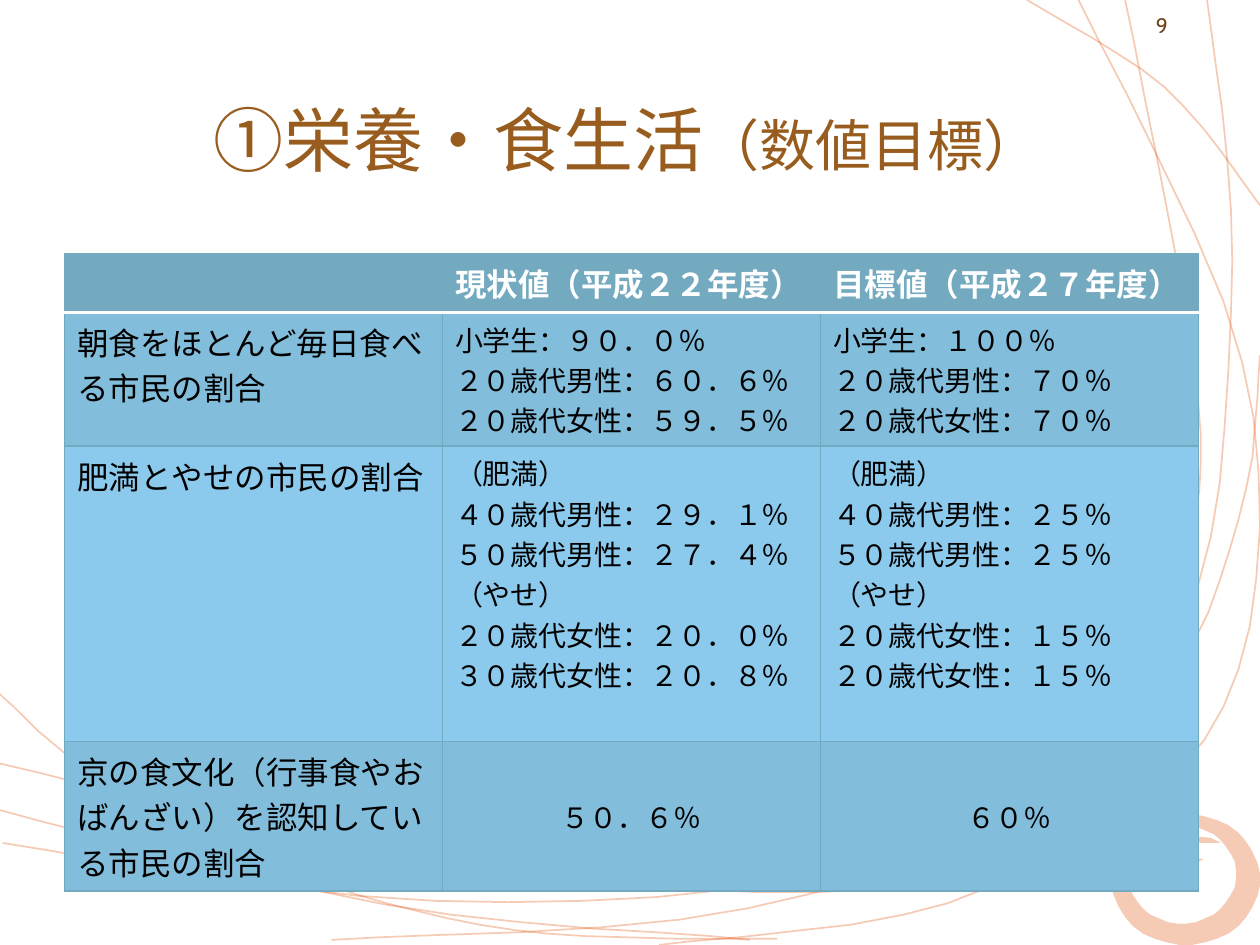
"""Build a slide with numeric targets for nutrition and diet."""
from math import cos, radians, sin

from lxml import etree
from pptx import Presentation
from pptx.dml.color import RGBColor
from pptx.enum.text import MSO_ANCHOR, PP_ALIGN
from pptx.oxml.ns import qn
from pptx.util import Cm, Pt

CENTER, LEFT = PP_ALIGN.CENTER, PP_ALIGN.LEFT
MIDDLE, TOP = MSO_ANCHOR.MIDDLE, MSO_ANCHOR.TOP
ORANGE, TEAL, BAND, SKY = "E3560E", "73AAC0", "82BDDB", "8CCAED"
WHITE, BLACK, BROWN, DARK_BROWN = "FFFFFF", "000000", "975C1E", "704416"
POINT_UNIT = Cm(0.0254)
CURVE_STEPS = 6

STRANDS = [
    [(-3, 548), (54, 600), (145, 656), (283, 710), (434, 741), (617, 745)],
    [(523, 750), (752, 717), (879, 624), (944, 435), (947, 287), (893, 0)],
    [(0, 606), (311, 677), (649, 708), (865, 665), (983, 531), (986, 288), (856, 0)],
    [(2, 669), (345, 715), (682, 687), (908, 560), (983, 412), (1000, 282)],
    [(263, 746), (593, 721), (844, 625), (951, 464), (978, 207), (958, 0)],
    [(815, 0), (924, 69), (1000, 163)],
    [(0, 643), (306, 718), (595, 746)],
]
BRUSH_FLECKS = [
    [(922, 661), (961, 665), (969, 669), (950, 669)],
    [(930, 676), (955, 682), (951, 684)],
]
ROWS = [
    ("", "現状値（平成２２年度）", "目標値（平成２７年度）"),
    ("朝食をほとんど毎日食べる市民の割合",
     "小学生：９０．０％\n２０歳代男性：６０．６％\n２０歳代女性：５９．５％",
     "小学生：１００％\n２０歳代男性：７０％\n２０歳代女性：７０％"),
    ("肥満とやせの市民の割合",
     "（肥満）\n４０歳代男性：２９．１％\n５０歳代男性：２７．４％\n"
     "（やせ）\n２０歳代女性：２０．０％\n３０歳代女性：２０．８％",
     "（肥満）\n４０歳代男性：２５％\n５０歳代男性：２５％\n"
     "（やせ）\n２０歳代女性：１５％\n２０歳代女性：１５％"),
    ("京の食文化（行事食やおばんざい）を認知している市民の割合", "５０．６％", "６０％"),
]
ROW_HEIGHTS = [1.19, 2.68, 5.95, 3.02]
ROW_FILLS = [TEAL, BAND, SKY, BAND]


def rgb(color):
    """Turn a hex string into a colour."""
    return RGBColor.from_string(color)


def add_run(p, text, size, color, font="Arial", bold=False, align=LEFT):
    """Append a formatted run to a paragraph."""
    p.alignment = align
    r = p.add_run()
    r.text = text
    r.font.size, r.font.name, r.font.bold = Pt(size), font, bold
    r.font.color.rgb = rgb(color)


def spline(a, b, c, d, t):
    """Find the Catmull-Rom value between b and c at t."""
    return b + t / 2 * (c - a + t * (2 * a - 5 * b + 4 * c - d + t * (3 * (b - c) + d - a)))


def smooth_curve(knots):
    """Return the points of a smooth curve through the knots."""
    padded = [knots[0], *knots, knots[-1]]
    points = [tuple(round(spline(*axis, step / CURVE_STEPS)) for axis in zip(*padded[i:i + 4]))
              for i in range(len(knots) - 1) for step in range(CURVE_STEPS)]
    return points + [knots[-1]]


def arc(x, y, rx, ry):
    """Return points of an elliptical arc that is open at the top."""
    return [(round(x + rx * cos(radians(a))), round(y + ry * sin(radians(a))))
            for a in range(-85, 246, 10)]


def add_outline(s, points, closed, alpha):
    """Draw a translucent orange strand, or a filled patch when closed."""
    builder = s.shapes.build_freeform(*points[0], scale=POINT_UNIT)
    builder.add_line_segments(points[1:], close=closed)
    sp = builder.convert_to_shape()
    sp.shadow.inherit = False
    if closed:
        sp.line.fill.background()
        paint = sp.fill
    else:
        sp.fill.background()
        sp.line.width = Pt(1)
        paint = sp.line.fill
    paint.solid()
    paint.fore_color.rgb = rgb(ORANGE)
    for color in sp.element.spPr.iter(qn("a:srgbClr")):
        etree.SubElement(color, qn("a:alpha"), val=str(alpha * 1000))


def add_border(cell, side, color, width):
    """Give one side of a cell a solid border."""
    line = etree.SubElement(cell._tc.get_or_add_tcPr(), qn(f"a:ln{side}"), w=str(Pt(width)))
    fill = etree.SubElement(line, qn("a:solidFill"))
    etree.SubElement(fill, qn("a:srgbClr"), val=color)


def fill_cell(cell, text, row, col):
    """Write and format one cell according to its place in the table."""
    header, last = row == 0, row == len(ROWS) - 1
    for side in "LRTB":
        under_header = (row, side) in ((0, "B"), (1, "T"))
        add_border(cell, side, *((WHITE, 1.54) if under_header else (TEAL, 1.04)))
    cell.fill.solid()
    cell.fill.fore_color.rgb = rgb(ROW_FILLS[row])
    cell.vertical_anchor = MIDDLE if last and col else TOP
    tf = cell.text_frame
    for i, line in enumerate(text.split("\n")):
        p = tf.add_paragraph() if i else tf.paragraphs[0]
        add_run(p, line, 18 if header or col == 0 else 16, WHITE if header else BLACK,
                font="Calibri" if header else "Arial", bold=header,
                align=CENTER if last and col else LEFT)


def add_targets_table(s):
    """Add the table of current and target values."""
    table = s.shapes.add_table(len(ROWS), 3, Cm(1.3), Cm(5.11), Cm(22.86),
                               Cm(sum(ROW_HEIGHTS))).table
    for row, (texts, height) in enumerate(zip(ROWS, ROW_HEIGHTS)):
        table.rows[row].height = Cm(height)
        for col, text in enumerate(texts):
            fill_cell(table.cell(row, col), text, row, col)


def set_title(s):
    """Place the title and write its two sizes of text."""
    sp = s.shapes.title
    sp.left, sp.top, sp.width, sp.height = Cm(1.2), Cm(1.2), Cm(22.86), Cm(3.18)
    sp.text_frame.vertical_anchor = MIDDLE
    for text, size in (("①栄養・食生活", 40), ("（数値目標）", 32)):
        add_run(sp.text_frame.paragraphs[0], text, size, BROWN, font="Calibri", align=CENTER)


def add_page_number(s):
    """Add the page number at the top right."""
    tf = s.shapes.add_textbox(Cm(21.44), Cm(0), Cm(3.96), Cm(1)).text_frame
    tf.word_wrap = True
    tf.vertical_anchor = MIDDLE
    add_run(tf.paragraphs[0], "9", 12, DARK_BROWN, font="Cabin", align=CENTER)


def main():
    """Build and save the presentation."""
    prs = Presentation()
    prs.slide_width, prs.slide_height = Cm(25.4), Cm(19.05)
    s = prs.slides.add_slide(prs.slide_layouts[5])
    for knots in STRANDS:
        add_outline(s, smooth_curve(knots), closed=False, alpha=29)
    ring = arc(941, 698, 59, 52) + arc(938, 694, 43, 39)[::-1]
    for points in [ring, *BRUSH_FLECKS]:
        add_outline(s, points, closed=True, alpha=30)
    set_title(s)
    add_targets_table(s)
    add_page_number(s)
    prs.save("out.pptx")


if __name__ == "__main__":
    main()
